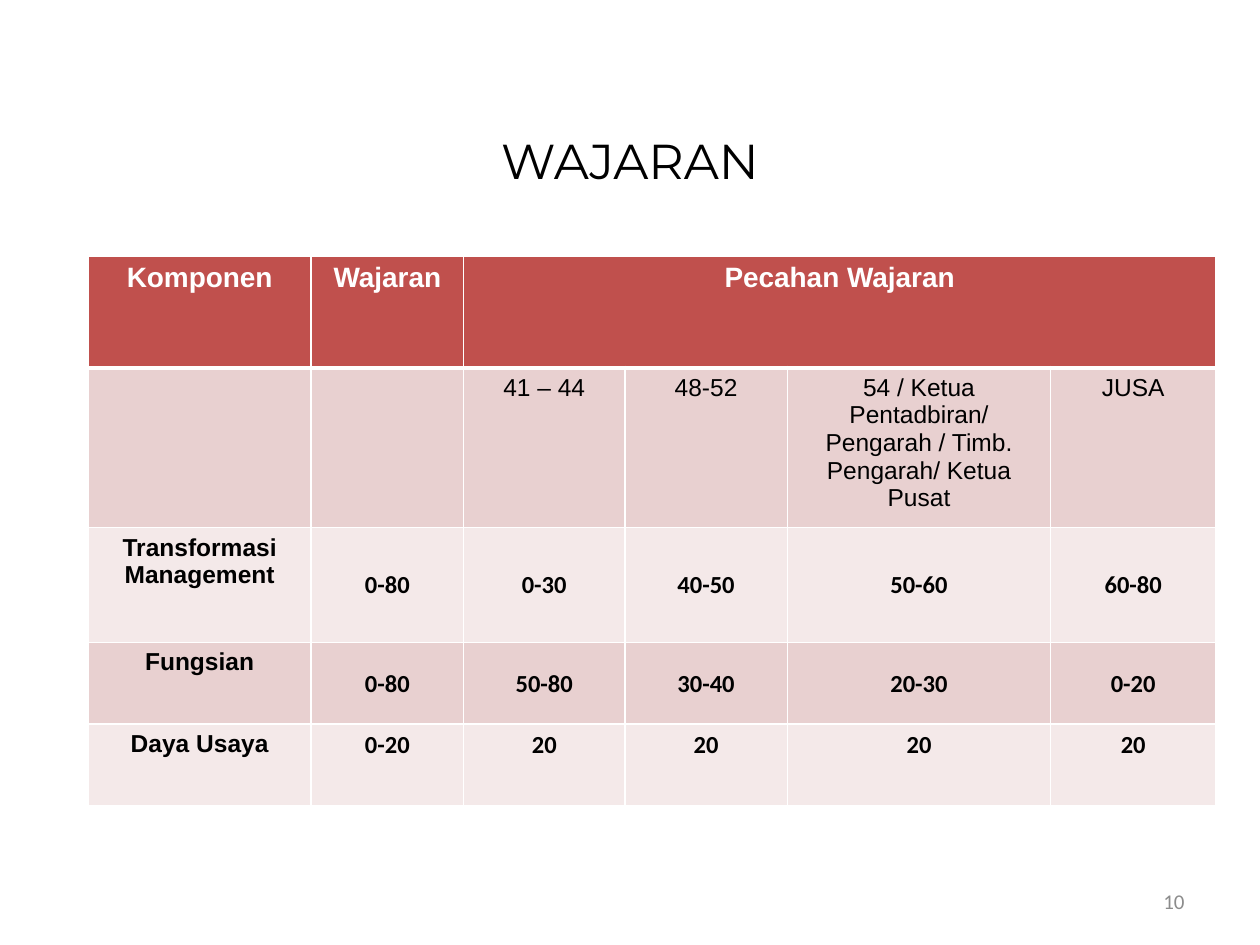
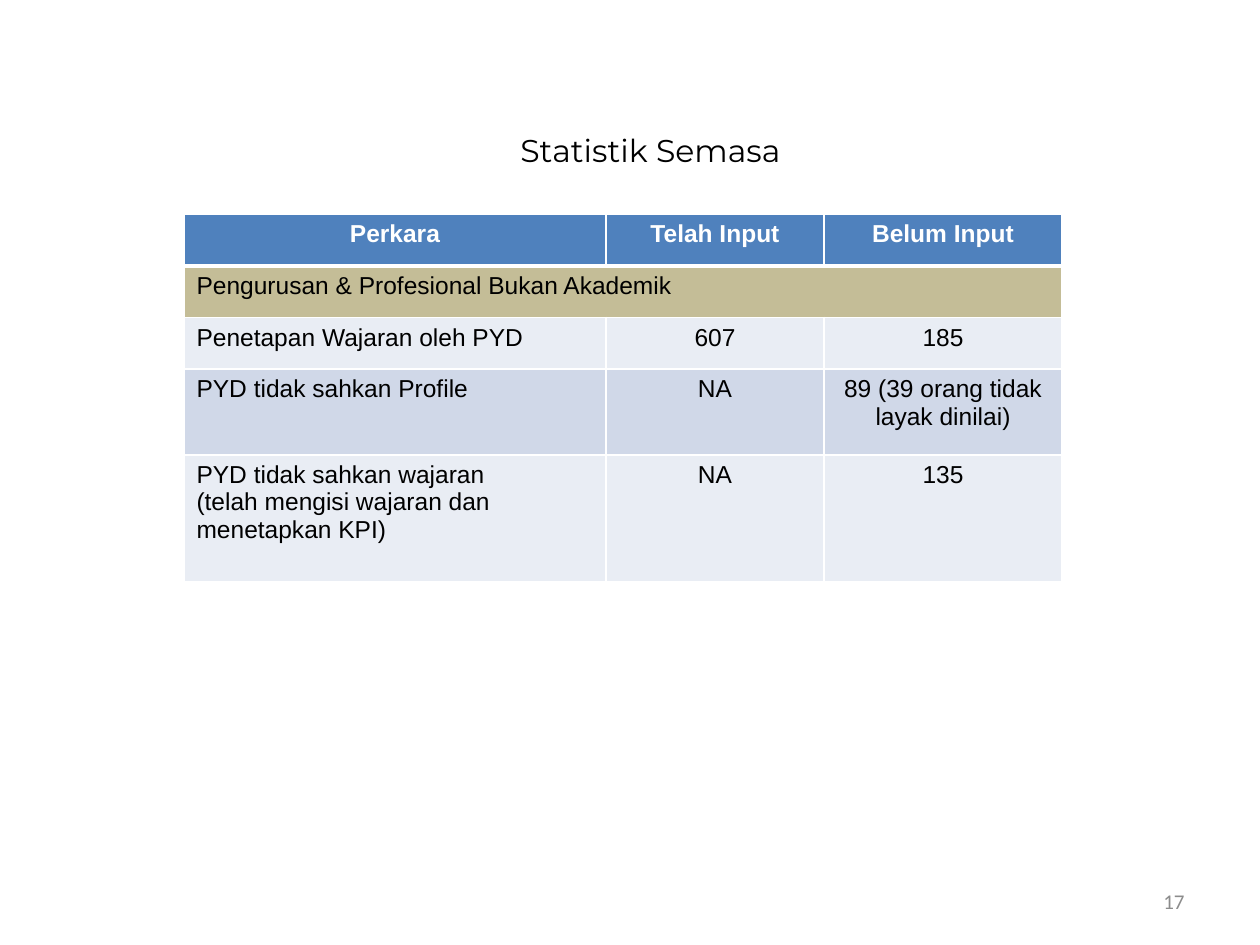
from pptx import Presentation
from pptx.dml.color import RGBColor as RGB
from pptx.enum.text import MSO_ANCHOR as ANCHOR, PP_ALIGN as ALIGN
from pptx.oxml import parse_xml
from pptx.oxml.ns import nsdecls
from pptx.util import Inches, Pt

COLORS = {
    "text": "000000", "white": "FFFFFF", "number": "8C8C8C",
    "red": "C0504D", "red_mid": "E8D0D0", "red_light": "F4E9E9",
    "blue": "4F81BD", "blue_mid": "D0D8E8", "blue_light": "E9EDF4",
    "tan": "C4BD97",
}


class Deck:
    title_font, table_font, number_font = "Montserrat", "Arial", "Calibri"

    def __init__(self):
        self.prs = Presentation()
        self.prs.slide_width, self.prs.slide_height = Inches(10), Inches(7.5)
        self.s = None

    def slide(self, number):
        self.s = self.prs.slides.add_slide(self.prs.slide_layouts[6])
        self.text(str(number), (7.17, 6.95, 2.33, 0.4), 12, self.number_font,
                  "number", ALIGN.RIGHT, ANCHOR.MIDDLE)

    def format(self, tf, size, font, color, align, bold=False):
        for p in tf.paragraphs:
            p.alignment = align
            for r in p.runs:
                r.font.size, r.font.name, r.font.bold = Pt(size), font, bold
                r.font.color.rgb = RGB.from_string(COLORS[color])

    def text(self, text, box, size, font, color, align, anchor):
        tf = self.s.shapes.add_textbox(*map(Inches, box)).text_frame
        tf.word_wrap, tf.vertical_anchor = True, anchor
        tf.text = text
        self.format(tf, size, font, color, align)

    def title(self, text, box, size):
        self.text(text, box, size, self.title_font, "text", ALIGN.CENTER, ANCHOR.TOP)

    def table(self, left, top, widths, heights, rows, fills):
        box = map(Inches, (left, top, sum(widths), sum(heights)))
        table = self.s.shapes.add_table(len(rows), len(widths), *box).table
        for column, width in zip(table.columns, widths):
            column.width = Inches(width)
        for i, (values, fill) in enumerate(zip(rows, fills)):
            table.rows[i].height = Inches(heights[i])
            for cell, value in zip(table.rows[i].cells, values):
                self.borders(cell, top=3 if i == 1 else 1, bottom=3 if i == 0 else 1)
                cell.fill.solid()
                cell.fill.fore_color.rgb = RGB.from_string(COLORS[fill])
                cell.text_frame.text = value
        return table

    def borders(self, cell, top, bottom):
        tc_pr = cell._tc.get_or_add_tcPr()
        for side, width in (("L", 1), ("R", 1), ("T", top), ("B", bottom)):
            tc_pr.append(parse_xml(
                f'<a:ln{side} {nsdecls("a")} w="{Pt(width)}"><a:solidFill>'
                f'<a:srgbClr val="{COLORS["white"]}"/></a:solidFill></a:ln{side}>'))

    def cell(self, cell, size=14, font=table_font, color="text",
             align=ALIGN.CENTER, bold=False):
        self.format(cell.text_frame, size, font, color, align, bold)

    def header(self, table, size):
        for cell in table.rows[0].cells:
            self.cell(cell, size, color="white", bold=True)

    def center_tightly(self, cell):
        cell.vertical_anchor = ANCHOR.MIDDLE
        cell.margin_left = cell.margin_right = cell.margin_top = Inches(0.01)
        cell.margin_bottom = 0


def weighting_slide(deck):
    deck.slide(10)
    rows = [
        ["Komponen", "Wajaran", "Pecahan Wajaran", "", "", ""],
        ["", "", "41 – 44", "48-52",
         "54 / Ketua Pentadbiran/ Pengarah / Timb. Pengarah/ Ketua Pusat", "JUSA"],
        ["Transformasi Management", "0-80", "0-30", "40-50", "50-60", "60-80"],
        ["Fungsian", "0-80", "50-80", "30-40", "20-30", "0-20"],
        ["Daya Usaya", "0-20", "20", "20", "20", "20"],
    ]
    table = deck.table(0.7, 2.03, [1.77, 1.21, 1.28, 1.29, 2.09, 1.31],
                       [0.89, 1.16, 0.91, 0.65, 0.65], rows,
                       ["red", "red_mid", "red_light", "red_mid", "red_light"])
    table.cell(0, 2).merge(table.cell(0, 5))
    deck.header(table, 16)
    for i in range(1, len(rows)):
        for j, cell in enumerate(table.rows[i].cells):
            is_range = i > 1 and j > 0
            deck.cell(cell, font=deck.number_font if is_range else deck.table_font,
                      bold=i > 1)
            if is_range and i < 4:
                deck.center_tightly(cell)
    deck.title("WAJARAN", (0.5, 0.99, 9, 0.63), 28)


def statistics_slide(deck):
    deck.slide(17)
    deck.title("Statistik Semasa ", (1.06, 0.99, 8.27, 0.71), 18)
    rows = [
        ["Perkara", "Telah Input", "Belum Input"],
        ["Pengurusan & Profesional Bukan Akademik", "", ""],
        ["Penetapan Wajaran oleh PYD", "607", "185"],
        ["PYD tidak sahkan Profile", "NA", "89 (39 orang tidak layak dinilai)"],
        ["PYD tidak sahkan wajaran\n(telah mengisi wajaran dan menetapkan KPI)",
         "NA", "135"],
    ]
    table = deck.table(1.46, 1.7, [3.35, 1.73, 1.89],
                       [0.41, 0.41, 0.41, 0.68, 1.01], rows,
                       ["blue", "tan", "blue_light", "blue_mid", "blue_light"])
    table.cell(1, 0).merge(table.cell(1, 2))
    deck.header(table, 14)
    for i in range(1, len(rows)):
        for j, cell in enumerate(table.rows[i].cells):
            deck.cell(cell, align=ALIGN.CENTER if j else ALIGN.LEFT)


def main():
    deck = Deck()
    weighting_slide(deck)
    statistics_slide(deck)
    deck.prs.save("out.pptx")


if __name__ == "__main__":
    main()
